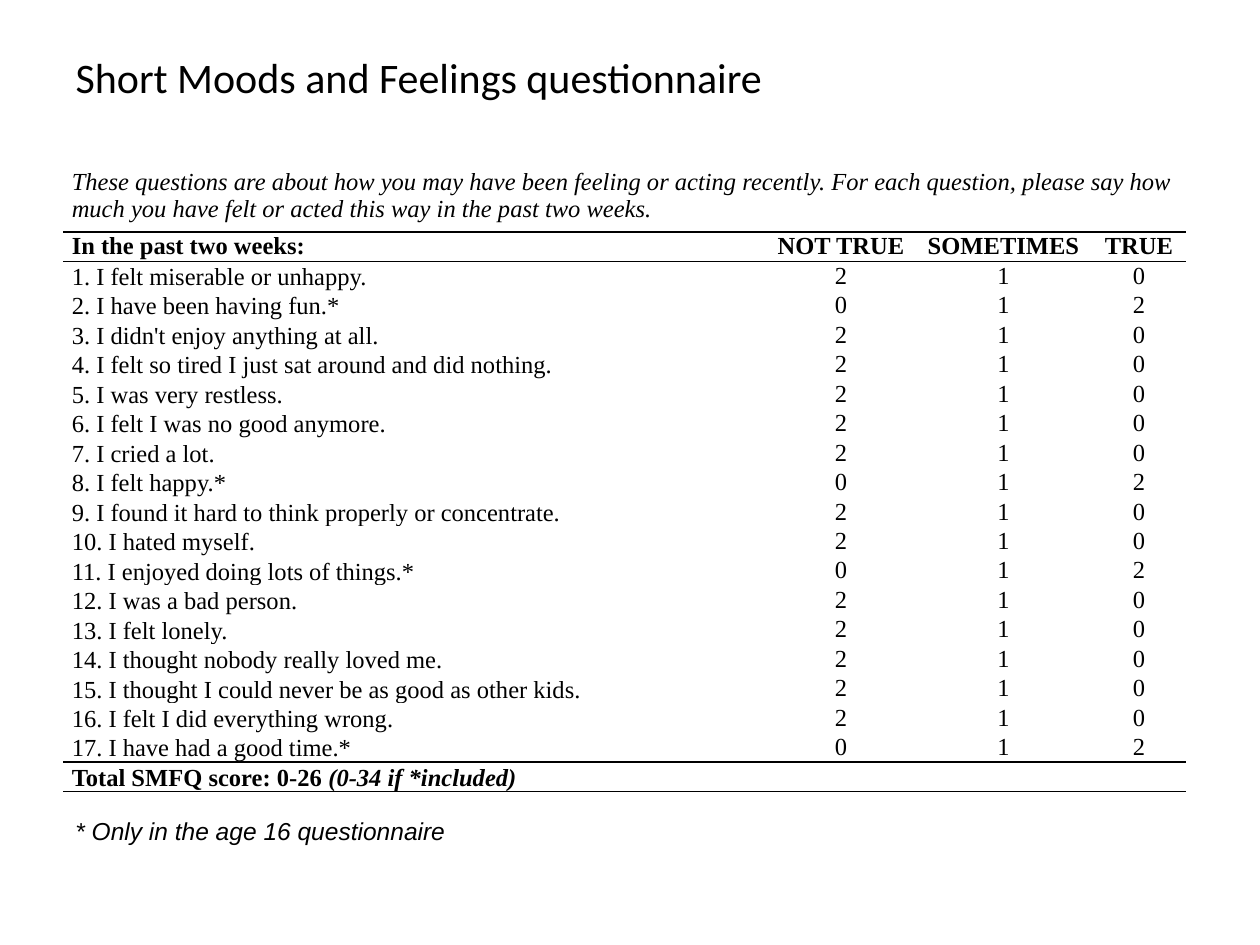
"""Build the Short Moods and Feelings questionnaire slide."""
from lxml import etree
from pptx import Presentation
from pptx.dml.color import RGBColor
from pptx.enum import text
from pptx.oxml import ns
from pptx.util import Inches, Pt

BLACK = RGBColor(0, 0, 0)
WHITE = RGBColor(255, 255, 255)
SERIF = "Times New Roman"
PLAIN_TABLE = "{2D5ABB26-0587-4C30-8999-92F81FD0307C}"

TITLE = "Short Moods and Feelings questionnaire"
INTRO = ("These questions are about how you may have been feeling or acting recently. "
         "For each question, please say how much you have felt or acted this way "
         "in the past two weeks.")
HEADINGS = ["In the past two weeks:", "NOT TRUE", "SOMETIMES", "TRUE"]
QUESTIONS = [
    "I felt miserable or unhappy.",
    "I have been having fun.*",
    "I didn't enjoy anything at all.",
    "I felt so tired I just sat around and did nothing.",
    "I was very restless.",
    "I felt I was no good anymore.",
    "I cried a lot.",
    "I felt happy.*",
    "I found it hard to think properly or concentrate.",
    "I hated myself.",
    "I enjoyed doing lots of things.*",
    "I was a bad person.",
    "I felt lonely.",
    "I thought nobody really loved me.",
    "I thought I could never be as good as other kids.",
    "I felt I did everything wrong.",
    "I have had a good time.*",
]
TOTAL = "Total SMFQ score: 0-26 "
TOTAL_NOTE = "(0-34 if *included)"
FOOTNOTE = "* Only in the age 16 questionnaire"

COLUMN_WIDTHS = [5.59, 1.17, 1.41, 0.74]
TABLE_HEIGHT = 5.02
INTRO_HEIGHT = 0.57


def set_font(paragraph, name, size, bold=False, italic=False):
    font = paragraph.font
    font.name, font.size, font.bold, font.italic = name, Pt(size), bold, italic
    font.color.rgb = BLACK


def rule_cell(cell, ruled_edges):
    properties = cell._tc.get_or_add_tcPr()
    for position, edge in enumerate(("lnL", "lnR", "lnT", "lnB")):
        ruled = edge in ruled_edges
        line = etree.Element(ns.qn(f"a:{edge}"), w=str(Pt(1) if ruled else 0))
        if ruled:
            fill = etree.SubElement(line, ns.qn("a:solidFill"))
            etree.SubElement(fill, ns.qn("a:srgbClr"), val=str(BLACK))
        else:
            etree.SubElement(line, ns.qn("a:noFill"))
        properties.insert(position, line)


def score_row(number, question):
    scores = ["0", "1", "2"] if question.endswith("*") else ["2", "1", "0"]
    return [f"{number}. {question}", *scores]


def add_questionnaire(slide):
    rows = [[INTRO, "", "", ""], HEADINGS]
    rows += [score_row(n, question) for n, question in enumerate(QUESTIONS, 1)]
    rows.append(["", "", "", ""])
    last = len(rows) - 1
    rules_below = {0, 1, last - 1, last}

    frame = slide.shapes.add_table(len(rows), len(COLUMN_WIDTHS), Inches(0.5), Inches(1.27),
                                   Inches(sum(COLUMN_WIDTHS)), Inches(TABLE_HEIGHT))
    table = frame.table
    table.first_row = table.horz_banding = False
    table._tbl.tblPr.find(ns.qn("a:tableStyleId")).text = PLAIN_TABLE
    for column, width in zip(table.columns, COLUMN_WIDTHS):
        column.width = Inches(width)

    row_height = (TABLE_HEIGHT - INTRO_HEIGHT) / last
    for r, values in enumerate(rows):
        table.rows[r].height = Inches(row_height if r else INTRO_HEIGHT)
        edges = {edge for edge, row in (("lnT", r - 1), ("lnB", r)) if row in rules_below}
        for c, value in enumerate(values):
            cell = table.cell(r, c)
            cell.margin_left = cell.margin_right = Inches(0.07)
            cell.margin_top = cell.margin_bottom = 0
            low = r > 1 and c == 0
            cell.vertical_anchor = text.MSO_ANCHOR.BOTTOM if low else text.MSO_ANCHOR.MIDDLE
            cell.fill.solid()
            cell.fill.fore_color.rgb = WHITE
            rule_cell(cell, edges)
            paragraph = cell.text_frame.paragraphs[0]
            if value:
                paragraph.add_run().text = value
            if c:
                paragraph.alignment = text.PP_ALIGN.CENTER
            set_font(paragraph, SERIF, 14, bold=r in (1, last), italic=r == 0)

    table.cell(0, 0).merge(table.cell(0, 3))
    table.cell(last, 0).merge(table.cell(last, 1))
    total = table.cell(last, 0).text_frame.paragraphs[0]
    total.add_run().text = TOTAL
    note = total.add_run()
    note.text = TOTAL_NOTE
    note.font.italic = True


def main():
    deck = Presentation()
    deck.slide_width, deck.slide_height = Inches(10), Inches(7.5)
    slide = deck.slides.add_slide(deck.slide_layouts[5])

    title = slide.shapes.title
    title.left, title.top, title.width, title.height = map(Inches, (0.5, 0.3, 9, 0.61))
    title.text_frame.text = TITLE
    title.text_frame.vertical_anchor = text.MSO_ANCHOR.MIDDLE
    heading = title.text_frame.paragraphs[0]
    heading.alignment = text.PP_ALIGN.LEFT
    set_font(heading, "Calibri", 24)

    add_questionnaire(slide)

    footnote = slide.shapes.add_textbox(*map(Inches, (0.5, 6.43, 5.76, 0.34))).text_frame
    footnote.word_wrap = True
    footnote.auto_size = text.MSO_AUTO_SIZE.SHAPE_TO_FIT_TEXT
    footnote.text = FOOTNOTE
    set_font(footnote.paragraphs[0], "Arial", 14, italic=True)

    deck.save("out.pptx")


if __name__ == "__main__":
    main()
